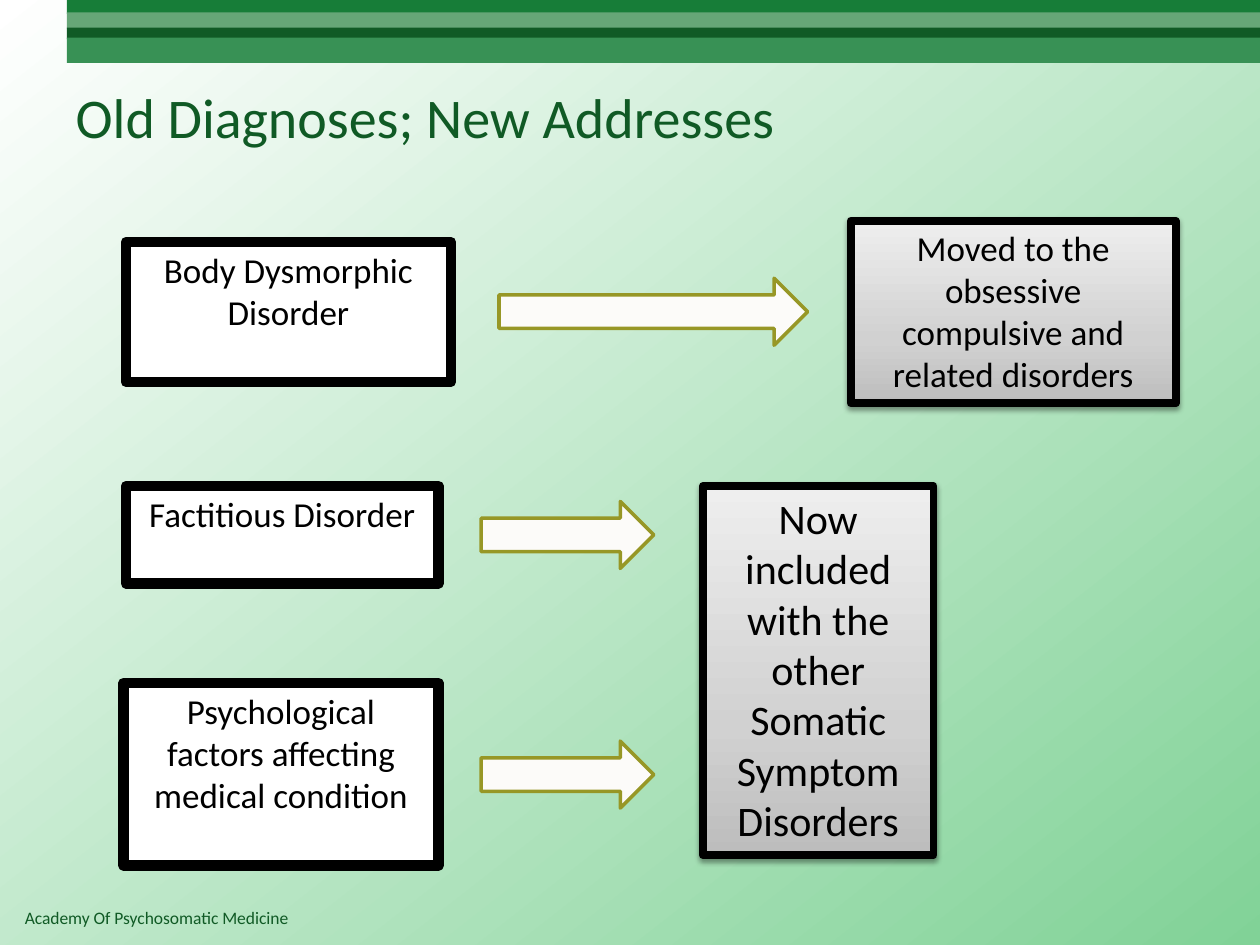
from copy import deepcopy
from dataclasses import dataclass

from lxml import etree
from pptx import Presentation
from pptx import util as u
from pptx.dml.color import RGBColor
from pptx.enum import shapes, text
from pptx.oxml.ns import qn


@dataclass
class Theme:
    font: str = "Calibri"
    green: str = "105A25"
    bars: tuple = ("177D38", "66A677", "105A25", "389155")
    back: tuple = ((0, "FFFFFF"), (1, "81D297"))
    grey: tuple = ((0, "BDBDBD"), (0.35, "D1D1D1"), (1, "EEEEEE"))
    white: str = "FFFFFF"
    black: str = "000000"
    cream: str = "FCFBF9"
    olive: str = "979726"
    title: int = 32
    large: int = 24
    body: int = 20
    foot: int = 10


def shade(fill, root, stops, angle):
    """Fill with a linear gradient; root is the element that holds it."""
    fill.gradient()
    fill.gradient_angle = angle
    parts = next(root.iter(qn("a:gsLst")))
    for _ in stops[2:]:
        parts.insert(1, deepcopy(parts[0]))
    for stop, (place, hue) in zip(fill.gradient_stops, stops):
        stop.position = place
        stop.color.rgb = RGBColor.from_string(hue)


def write(frame, words, size, hue, align):
    frame.text = words
    frame.word_wrap = True
    para = frame.paragraphs[0]
    para.alignment = align
    font = para.runs[0].font
    font.name = theme.font
    font.size = u.Pt(size)
    font.color.rgb = RGBColor.from_string(hue)


theme = Theme()
kind = shapes.MSO_SHAPE
left, center = text.PP_ALIGN.LEFT, text.PP_ALIGN.CENTER

deck = Presentation()
deck.slide_width, deck.slide_height = u.Cm(25.4), u.Cm(19.05)
slide = deck.slides.add_slide(deck.slide_layouts[5])
shade(slide.background.fill, slide.element, theme.back, 308)

# Header bars
for hue, top, high in zip(theme.bars, (0, 0.25, 0.56, 0.76), (0.28, 0.33, 0.23, 0.51)):
    bar = slide.shapes.add_shape(kind.RECTANGLE, u.Cm(1.35), u.Cm(top), u.Cm(24.05), u.Cm(high))
    bar.shadow.inherit = False
    bar.fill.solid()
    bar.fill.fore_color.rgb = RGBColor.from_string(hue)
    bar.line.fill.background()

# Footer and title
foot = slide.shapes.add_textbox(u.Cm(0.25), u.Cm(18.16), u.Cm(17.63), u.Cm(0.69))
write(foot.text_frame, "Academy Of Psychosomatic Medicine", theme.foot, theme.green, left)

title = slide.shapes.title
title.left, title.top = u.Cm(1.27), u.Cm(0.76)
title.width, title.height = u.Cm(22.86), u.Cm(3.18)
write(title.text_frame, "Old Diagnoses; New Addresses", theme.title, theme.green, left)
title.text_frame.vertical_anchor = text.MSO_ANCHOR.MIDDLE

# Arrows from old to new
for x, y, wide in ((10.06, 5.61, 6.22), (9.7, 10.11, 3.48), (9.7, 14.94, 3.48)):
    arrow = slide.shapes.add_shape(kind.RIGHT_ARROW, u.Cm(x), u.Cm(y), u.Cm(wide), u.Cm(1.35))
    arrow.shadow.inherit = False
    arrow.fill.solid()
    arrow.fill.fore_color.rgb = RGBColor.from_string(theme.cream)
    arrow.line.color.rgb = RGBColor.from_string(theme.olive)
    arrow.line.width = u.Pt(2)

# Old diagnoses in white, new addresses in grey
boxes = (
    ("Body Dysmorphic Disorder", 2.54, 4.88, 6.55, 2.82, theme.body, False),
    ("Factitious Disorder", 2.54, 9.8, 6.3, 1.96, theme.body, False),
    ("Psychological factors affecting medical condition",
     2.49, 13.77, 6.35, 3.68, theme.body, False),
    ("Now included with the other Somatic Symptom Disorders",
     14.17, 9.8, 4.65, 7.44, theme.large, True),
    ("Moved to the obsessive compulsive and related disorders",
     17.15, 4.45, 6.55, 3.68, theme.body, True),
)
for words, x, y, wide, high, size, new in boxes:
    box = slide.shapes.add_shape(kind.RECTANGLE, u.Cm(x), u.Cm(y), u.Cm(wide), u.Cm(high))
    box.shadow.inherit = False
    box.line.color.rgb = RGBColor.from_string(theme.black)
    box.line.width = u.Pt(4.5 if new else 6)
    write(box.text_frame, words, size, theme.black, center)
    box.text_frame.vertical_anchor = text.MSO_ANCHOR.TOP
    if new:
        shade(box.fill, box.element, theme.grey, 90)
        effect = next(box.element.iter(qn("a:effectLst")))
        shadow = etree.SubElement(effect, qn("a:outerShdw"), blurRad=str(u.Pt(3.1)),
                                  dist=str(u.Pt(1.6)), dir="5400000", rotWithShape="0")
        tint = etree.SubElement(shadow, qn("a:srgbClr"), val=theme.black)
        etree.SubElement(tint, qn("a:alpha"), val="38000")
    else:
        box.fill.solid()
        box.fill.fore_color.rgb = RGBColor.from_string(theme.white)

deck.save("out.pptx")
